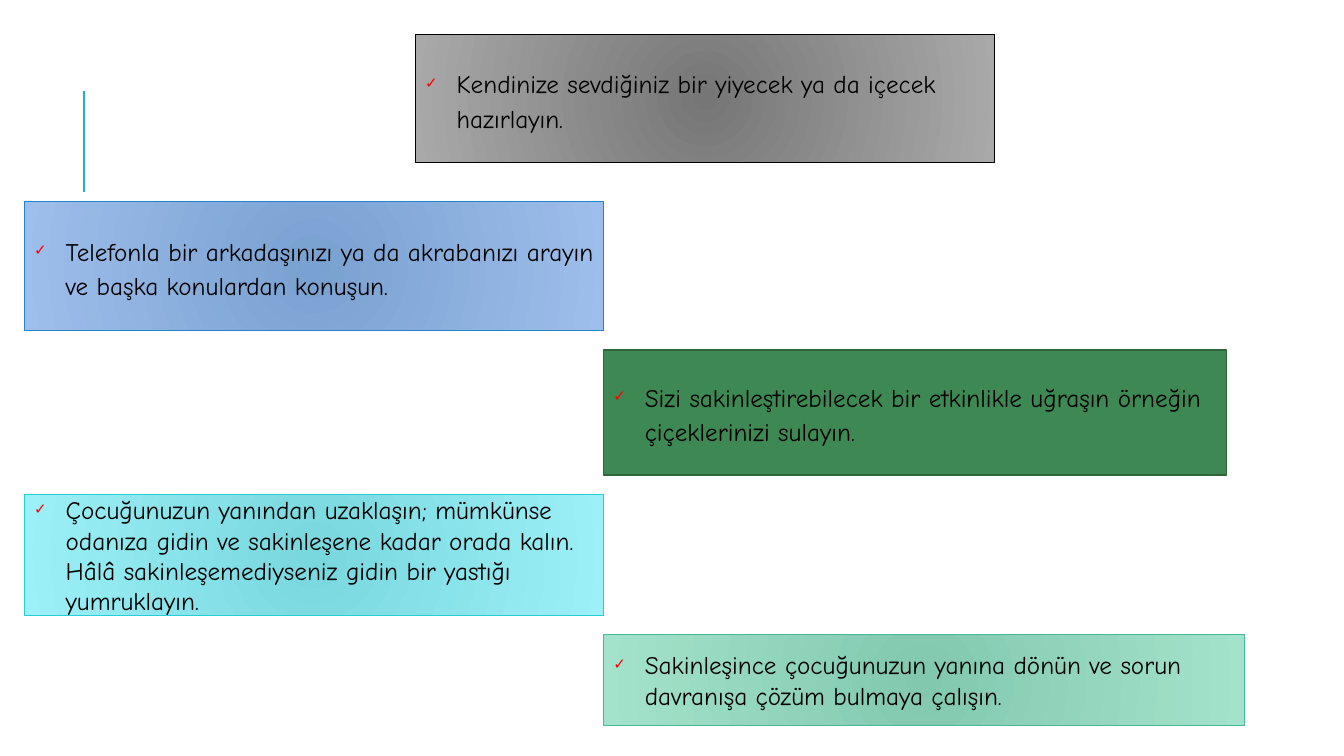
from lxml.etree import SubElement as Sub
from pptx import Presentation
from pptx.dml.color import RGBColor as Rgb
from pptx.enum.shapes import MSO_CONNECTOR as Link, MSO_SHAPE as Kind
from pptx.enum.text import MSO_ANCHOR as Anchor, PP_ALIGN as Align
from pptx.oxml.ns import qn
from pptx.util import Pt

FONT = "Comic Neue"
HEX = {
    "text": "000000", "check": "FF0000", "rule": "1CADE4",
    "gray in": "767676", "gray out": "A9A9A9", "gray line": "000000",
    "blue in": "79A1D1", "blue out": "9EBEEB", "blue line": "2683C6",
    "green in": "3E8853", "green out": "3E8853", "green line": "2E653D",
    "aqua in": "79D7DE", "aqua out": "9CF0F7", "aqua line": "27CED7",
    "mint in": "81C8AF", "mint out": "A4E3CB", "mint line": "42BA97",
}
LEFT, MID, WIDE = 17.3, 431, 414
# hue, left, top, width, height, line width, line spacing, text
TIPS = [
    ("gray", 296.6, 24.9, WIDE, 91, 0.75, 1.15,
     "Kendinize sevdiğiniz bir yiyecek ya da içecek hazırlayın."),
    ("blue", LEFT, 144, WIDE, 92.2, 0.75, 1.15,
     "Telefonla bir arkadaşınızı ya da akrabanızı arayın ve başka konulardan konuşun."),
    ("green", MID, 249.8, 445, 89.3, 1.25, 1.15,
     "Sizi sakinleştirebilecek bir etkinlikle uğraşın örneğin çiçeklerinizi sulayın."),
    ("aqua", LEFT, 353.3, WIDE, 86.4, 0.75, 1,
     "Çocuğunuzun yanından uzaklaşın; mümkünse odanıza gidin ve sakinleşene kadar "
     "orada kalın. Hâlâ sakinleşemediyseniz gidin bir yastığı yumruklayın."),
    ("mint", MID, 453.3, 458, 64.8, 0.75, 1,
     "Sakinleşince çocuğunuzun yanına dönün ve sorun davranışa çözüm bulmaya çalışın."),
]


def color(name):
    return Rgb.from_string(HEX[name])


def paint(box, hue):
    """Fill with one colour, or with a round gradient if the two ends differ."""
    ends = [color(f"{hue} in"), color(f"{hue} out")]
    if ends[0] == ends[1]:
        box.fill.solid()
        box.fill.fore_color.rgb = ends[0]
        return
    box.fill.gradient()
    for stop, end, place in zip(box.fill.gradient_stops, ends, (0, 1)):
        stop.color.rgb = end
        stop.position = place
    grad = box._element.spPr.find(qn("a:gradFill"))
    grad.remove(grad.find(qn("a:lin")))
    ring = Sub(grad, qn("a:path"), path="circle")
    Sub(ring, qn("a:fillToRect"), {side: "100000" for side in "ltrb"})


def check(para):
    """Give the paragraph a hanging red check mark."""
    props = para._p.get_or_add_pPr()
    props.set("marL", str(Pt(22.5)))
    props.set("indent", str(-Pt(22.5)))
    Sub(Sub(props, qn("a:buClr")), qn("a:srgbClr"), val=HEX["check"])
    Sub(props, qn("a:buSzPct"), val="60000")
    Sub(props, qn("a:buFont"), typeface=FONT)
    Sub(props, qn("a:buChar"), char="✓")


def add_tip(slide, hue, left, top, width, height, line, space, text):
    box = slide.shapes.add_shape(
        Kind.RECTANGLE, Pt(left), Pt(top), Pt(width), Pt(height))
    box.shadow.inherit = False
    paint(box, hue)
    box.line.color.rgb = color(f"{hue} line")
    box.line.width = Pt(line)
    frame = box.text_frame
    frame.word_wrap = True
    frame.vertical_anchor = Anchor.MIDDLE
    para = frame.paragraphs[0]
    para.text = text
    check(para)
    para.alignment = Align.LEFT
    para.line_spacing = space
    para.space_before = Pt(7)
    para.font.name = FONT
    para.font.size = Pt(18)
    para.font.color.rgb = color("text")


def add_rule(slide):
    rule = slide.shapes.add_connector(
        Link.STRAIGHT, Pt(60), Pt(136.8), Pt(60), Pt(64.8))
    rule.line.color.rgb = color("rule")
    rule.line.width = Pt(1.5)
    Sub(rule._element.spPr, qn("a:effectLst"))


def main():
    deck = Presentation()
    deck.slide_width, deck.slide_height = Pt(960), Pt(540)
    slide = deck.slides.add_slide(deck.slide_layouts[6])
    add_rule(slide)
    for tip in TIPS:
        add_tip(slide, *tip)
    deck.save("out.pptx")


if __name__ == "__main__":
    main()
